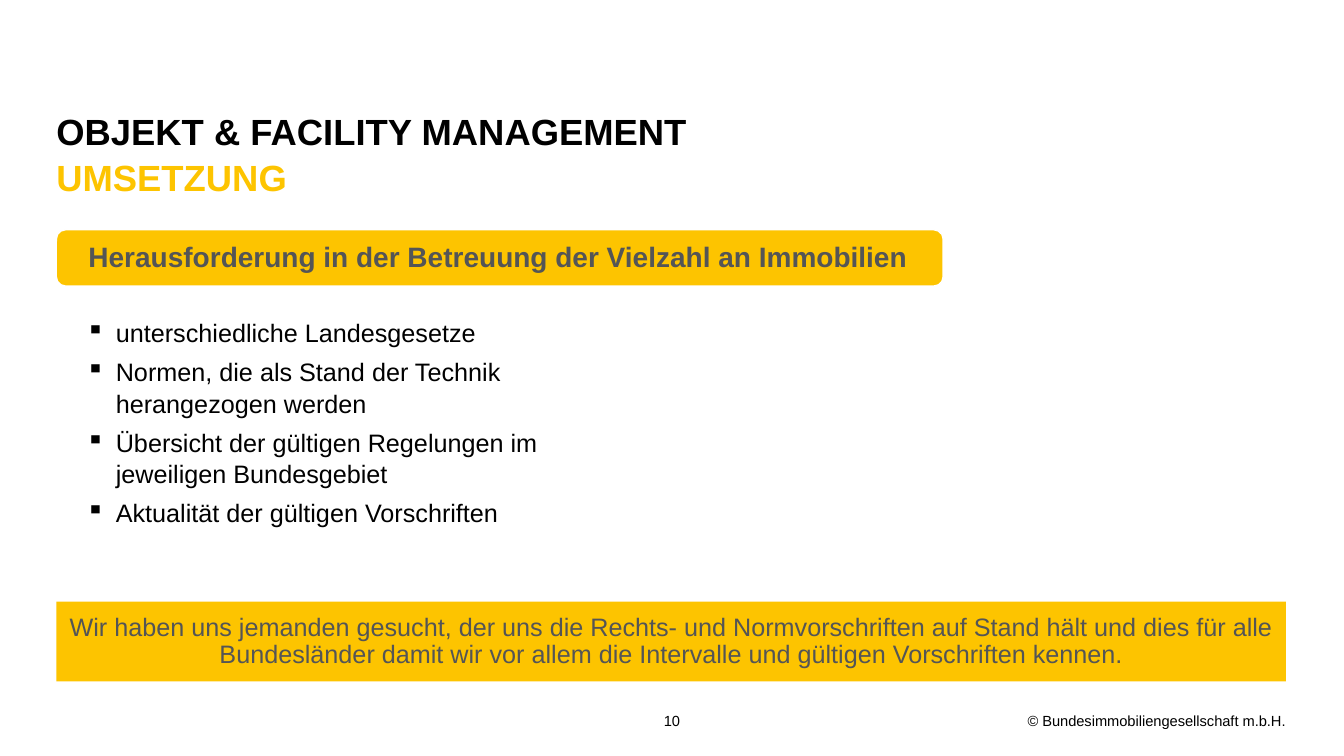
from pptx import Presentation
from pptx import util as u
from pptx.dml.color import RGBColor
from pptx.enum import shapes, text
from pptx.oxml import parse_xml
from pptx.oxml.ns import nsdecls

COLORS = {"black": "000000", "yellow": "FDC400", "gray": "545556", "white": "FFFFFF"}
LEFT, WIDTH = 1.42, 30.99
MIDDLE = text.MSO_ANCHOR.MIDDLE
CENTER = text.PP_ALIGN.CENTER


def color(name):
    return RGBColor.from_string(COLORS[name])


def lengths(box):
    return [u.Cm(value) for value in box]


def set_frame(shape, anchor, side=0, edge=0):
    """Wrap the text and set the anchor and the insets in centimetres."""
    frame = shape.text_frame
    frame.word_wrap = True
    frame.auto_size = text.MSO_AUTO_SIZE.NONE
    frame.vertical_anchor = anchor
    frame.margin_left = frame.margin_right = u.Cm(side)
    frame.margin_top = frame.margin_bottom = u.Cm(edge)
    return frame


def format_paragraph(paragraph, size, color_name="black", bold=False,
                     alignment=text.PP_ALIGN.LEFT, spacing=None):
    paragraph.alignment = alignment
    paragraph.line_spacing = spacing
    font = paragraph.font
    font.name, font.size, font.bold = "Arial", u.Pt(size), bold
    font.color.rgb = color(color_name)


def add_title(slide, box, heading, subheading):
    title = slide.shapes.title
    title.left, title.top, title.width, title.height = lengths(box)
    frame = set_frame(title, text.MSO_ANCHOR.BOTTOM, edge=0.1)
    paragraph = frame.paragraphs[0]
    format_paragraph(paragraph, 26, bold=True, spacing=1.05)
    paragraph.add_run().text = heading
    paragraph.add_line_break()
    run = paragraph.add_run()
    run.text = subheading
    run.font.color.rgb = color("yellow")


def add_bullets(slide, box, items):
    frame = set_frame(slide.shapes.add_textbox(*lengths(box)),
                      text.MSO_ANCHOR.TOP, edge=0.1)
    for index, item in enumerate(items):
        paragraph = frame.add_paragraph() if index else frame.paragraphs[0]
        paragraph.text = item
        properties = paragraph._p.get_or_add_pPr()
        properties.set("marL", str(u.Cm(1.5)))
        properties.set("indent", str(u.Cm(-0.75)))
        properties.append(parse_xml(f'<a:buChar {nsdecls("a")} char="▪"/>'))
        paragraph.space_before = u.Pt(5 if index else 0)
        format_paragraph(paragraph, 18, spacing=1.05)


def add_banner(slide, box, kind, words, insets, size, **style):
    banner = slide.shapes.add_shape(kind, *lengths(box))
    banner.shadow.inherit = False
    banner.fill.solid()
    banner.fill.fore_color.rgb = color("yellow")
    banner.line.fill.background()
    paragraph = set_frame(banner, MIDDLE, *insets).paragraphs[0]
    paragraph.text = words
    format_paragraph(paragraph, size, "gray", spacing=0.9, **style)
    return banner


def add_footer_text(slide, box, words, alignment):
    frame = set_frame(slide.shapes.add_textbox(*lengths(box)), MIDDLE)
    frame.paragraphs[0].text = words
    format_paragraph(frame.paragraphs[0], 10.5, alignment=alignment)


def build_challenge_slide(presentation):
    slide = presentation.slides.add_slide(presentation.slide_layouts[5])
    add_title(slide, (LEFT, 2.82, WIDTH, 2.29),
              "OBJEKT & FACILITY MANAGEMENT", "UMSETZUNG")
    add_bullets(slide, (LEFT, 7.87, 15, 9.3), [
        "unterschiedliche Landesgesetze",
        "Normen, die als Stand der Technik herangezogen werden",
        "Übersicht der gültigen Regelungen im jeweiligen Bundesgebiet",
        "Aktualität der gültigen Vorschriften",
    ])
    add_banner(
        slide, (LEFT, 15.16, WIDTH, 2.01), shapes.MSO_SHAPE.RECTANGLE,
        "Wir haben uns jemanden gesucht, der uns die Rechts- und Normvorschriften "
        "auf Stand hält und dies für alle Bundesländer damit wir vor allem die "
        "Intervalle und gültigen Vorschriften kennen.",
        (0.23, 0.23), 18, alignment=CENTER)
    challenge = add_banner(
        slide, (LEFT, 5.79, 22.35, 1.42), shapes.MSO_SHAPE.ROUNDED_RECTANGLE,
        "Herausforderung in der Betreuung der Vielzahl an Immobilien",
        (0.74, 0.05), 20, bold=True)
    challenge.line.color.rgb = color("white")
    challenge.line.width = u.Pt(1)
    add_footer_text(slide, (14.94, 17.65, 3.99, 1.02), "10", CENTER)
    add_footer_text(slide, (24.31, 17.65, 8.1, 1.02),
                    "© Bundesimmobiliengesellschaft m.b.H.", text.PP_ALIGN.RIGHT)


def main():
    presentation = Presentation()
    presentation.slide_width, presentation.slide_height = u.Cm(33.87), u.Cm(19.05)
    build_challenge_slide(presentation)
    presentation.save("out.pptx")


if __name__ == "__main__":
    main()
